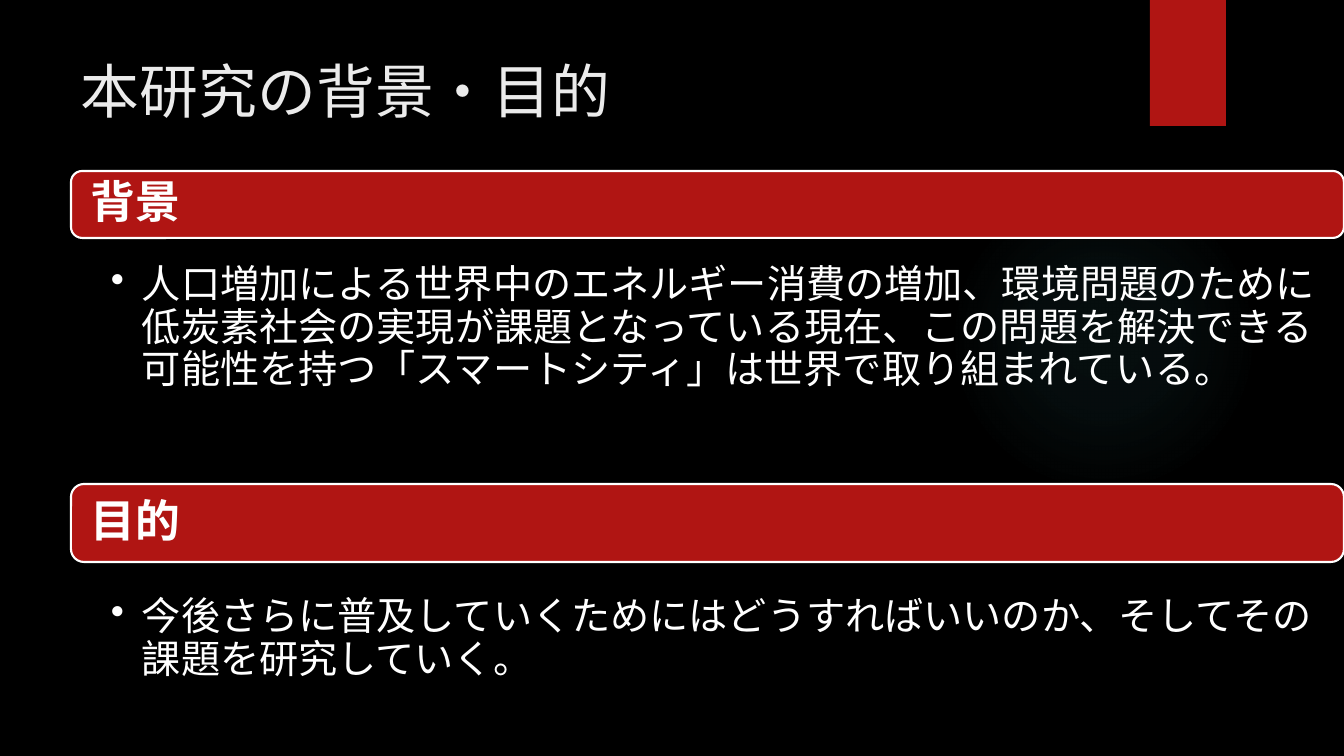
"""Build the slide on the background and purpose of the study."""
from lxml import etree
from pptx import Presentation
from pptx.dml.color import RGBColor
from pptx.enum.shapes import MSO_SHAPE
from pptx.enum.text import MSO_ANCHOR
from pptx.oxml import parse_xml
from pptx.oxml.ns import nsdecls, qn
from pptx.util import Pt

TITLE = "本研究の背景・目的"
PARTS = [
    ("背景", "人口増加による世界中のエネルギー消費の増加、環境問題のために"
     "低炭素社会の実現が課題となっている現在、この問題を解決できる"
     "可能性を持つ「スマートシティ」は世界で取り組まれている。",
     (171, 67), (261, 216)),
    ("目的", "今後さらに普及していくためにはどうすればいいのか、そしてその"
     "課題を研究していく。",
     (484, 78), (593, 146)),
]
FONT = "TeX Gyre Adventor"
BLACK, WHITE, PALE, RED, TEAL = "000000", "FFFFFF", "EBEBEB", "B01513", "50B9C1"
GLOW = [(0, 7), (36, 6), (69, 0), (100, 0)]
WIDE, HIGH = 1344, 756
LEFT, SPAN = 71, 1273


def px(n):
    return round(n * 914400 / 100.8)


def color(text):
    return RGBColor.from_string(text)


def shape(kind, box, fill, line=None):
    item = slide.shapes.add_shape(kind, *map(px, box))
    item.shadow.inherit = False
    item.fill.solid()
    item.fill.fore_color.rgb = color(fill)
    if line:
        item.line.color.rgb = color(line)
        item.line.width = Pt(1.5)
    else:
        item.line.fill.background()
    return item


def write(item, text, size, tint, pads, bold=False, mid=False, dot=False):
    frame = item.text_frame
    frame.word_wrap = True
    frame.vertical_anchor = MSO_ANCHOR.MIDDLE if mid else MSO_ANCHOR.TOP
    (frame.margin_left, frame.margin_top,
     frame.margin_right, frame.margin_bottom) = map(px, pads)
    para = frame.paragraphs[0]
    para.text = text
    para.alignment = 1
    if dot:
        props = para._p.get_or_add_pPr()
        props.set("marL", str(px(31)))
        props.set("indent", str(px(-31)))
        etree.SubElement(props, qn("a:buChar")).set("char", "•")
    if dot or mid:
        para.line_spacing = 0.9
    font = para.font
    font.size, font.name, font.bold = Pt(size), FONT, bold
    font.color.rgb = color(tint)
    east = etree.SubElement(font._element, qn("a:ea"))
    east.set("typeface", FONT)


def glow(box):
    item = shape(MSO_SHAPE.OVAL, box, TEAL)
    stops = "".join(
        f'<a:gs pos="{pos * 1000}"><a:srgbClr val="{TEAL}">'
        f'<a:alpha val="{alpha * 1000}"/></a:srgbClr></a:gs>'
        for pos, alpha in GLOW)
    fade = parse_xml(
        f'<a:gradFill {nsdecls("a")}><a:gsLst>{stops}</a:gsLst>'
        '<a:path path="circle"><a:fillToRect l="50000" t="50000" '
        'r="50000" b="50000"/></a:path></a:gradFill>')
    props = item._element.spPr
    props.replace(props.find(qn("a:solidFill")), fade)


deck = Presentation()
deck.slide_width, deck.slide_height = px(WIDE), px(HIGH)
slide = deck.slides.add_slide(deck.slide_layouts[6])
slide.background.fill.solid()
slide.background.fill.fore_color.rgb = color(BLACK)

glow((949, 184, 310, 310))
shape(MSO_SHAPE.RECTANGLE, (1150, 0, 76, 126), RED)
head = slide.shapes.add_textbox(*map(px, (LEFT, 50, 1037, 154)))
write(head, TITLE, 42, PALE, (10, 5, 10, 5))

for name, body, (top, tall), (low, deep) in PARTS:
    bar = shape(MSO_SHAPE.ROUNDED_RECTANGLE, (LEFT, top, SPAN, tall), RED, WHITE)
    write(bar, name, 32, WHITE, (16, 0, 16, 0), bold=True, mid=True)
    note = slide.shapes.add_textbox(*map(px, (LEFT, low, SPAN, deep)))
    write(note, body, 28, WHITE, (40, 4, 22, 4), dot=True)

deck.save("out.pptx")
